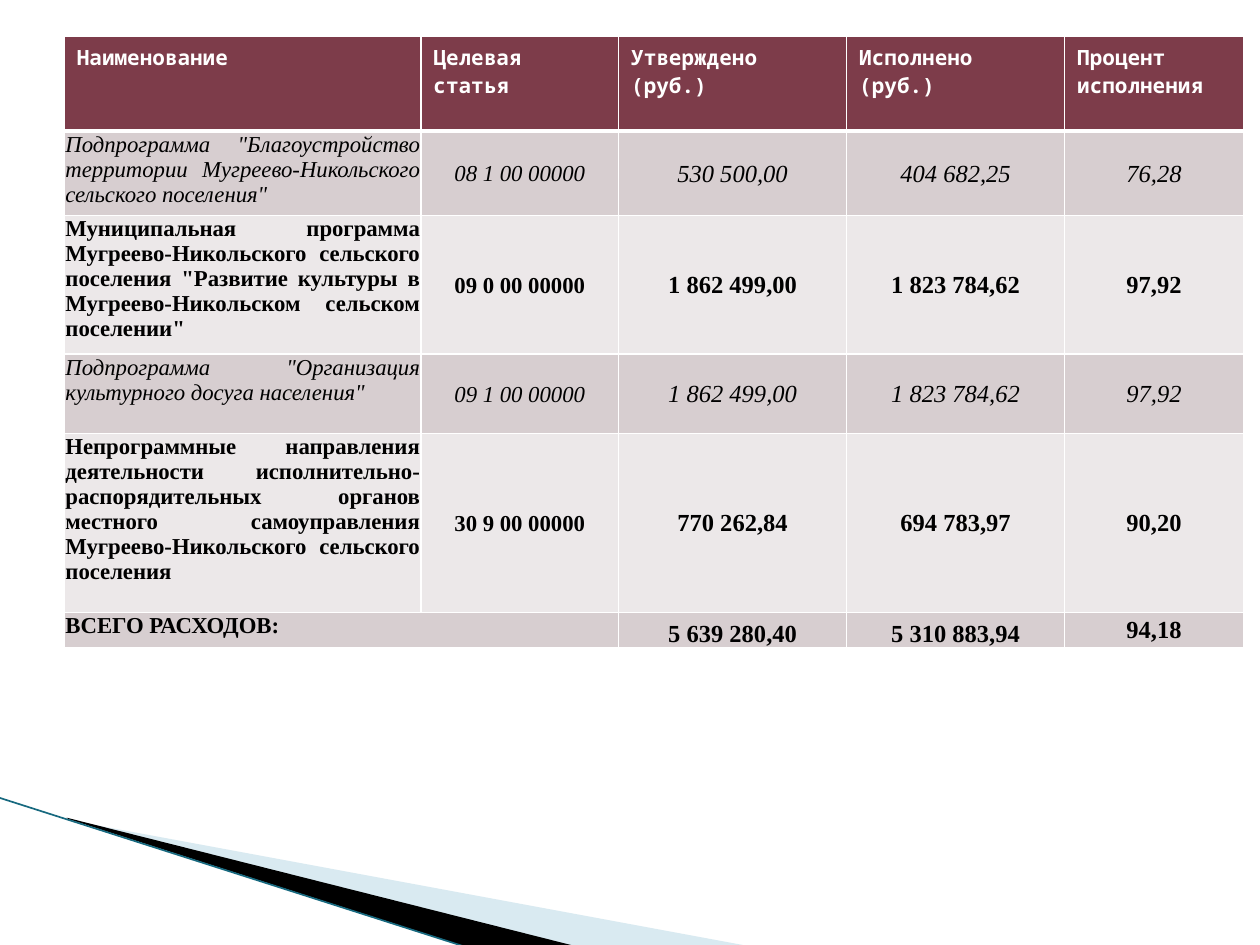
import pptx
import pptx.util
import pptx.dml.color
import pptx.enum.shapes
import pptx.enum.text
import pptx.oxml
import pptx.oxml.ns

ALIGN = pptx.enum.text.PP_ALIGN
ANCHOR = pptx.enum.text.MSO_ANCHOR
qn = pptx.oxml.ns.qn


def color(value):
    return pptx.dml.color.RGBColor.from_string(value)


def sub(parent, tag, **attrs):
    el = parent.makeelement(qn(tag), attrs)
    parent.append(el)
    return el


class Deck:
    COLS, ROWS = 100, 75
    HEAD_FONT, BODY_FONT = "Noto Sans Mono", "Times New Roman"
    HEAD_FILL, BANDS = "7D3C4A", ("ECE8E9", "D7CED0")
    WHITE, BLACK = "FFFFFF", "000000"

    def __init__(self):
        self.prs = pptx.Presentation()
        self.prs.slide_width = pptx.util.Inches(10)
        self.prs.slide_height = pptx.util.Inches(7.5)
        self.s = self.prs.slides.add_slide(self.prs.slide_layouts[6])
        self.s.background.fill.solid()
        self.s.background.fill.fore_color.rgb = color(self.WHITE)

    def x(self, cols):
        return round(self.prs.slide_width * cols / self.COLS)

    def y(self, rows):
        return round(self.prs.slide_height * rows / self.ROWS)

    def polygon(self, points, fill, opacity=100):
        start, *rest = [(self.x(a), self.y(b)) for a, b in points]
        builder = self.s.shapes.build_freeform(*start)
        builder.add_line_segments(rest)
        sp = builder.convert_to_shape()
        sp.shadow.inherit = False
        sp.line.fill.background()
        sp.fill.solid()
        sp.fill.fore_color.rgb = color(fill)
        if opacity < 100:
            clr = sp._element.spPr.find(qn("a:solidFill"))[0]
            sub(clr, "a:alpha", val=str(opacity * 1000))

    def line(self, start, end, stroke, width):
        cn = self.s.shapes.add_connector(
            pptx.enum.shapes.MSO_CONNECTOR.STRAIGHT,
            self.x(start[0]), self.y(start[1]), self.x(end[0]), self.y(end[1]))
        cn.line.color.rgb = color(stroke)
        cn.line.width = pptx.util.Pt(width)
        sub(cn._element.spPr, "a:effectLst")

    def table(self, left, top, widths, heights):
        frame = self.s.shapes.add_table(
            len(heights), len(widths), self.x(left), self.y(top),
            self.x(sum(widths)), self.y(sum(heights)))
        tbl = frame.table
        for column, width in zip(tbl.columns, widths):
            column.width = self.x(width)
        for row, height in zip(tbl.rows, heights):
            row.height = self.y(height)
        return tbl

    def paint(self, cell, fill, top=1, bottom=1):
        tcPr = cell._tc.get_or_add_tcPr()
        for side, width in (("L", 1), ("R", 1), ("T", top), ("B", bottom)):
            ln = sub(tcPr, "a:ln" + side, w=str(pptx.util.Pt(width)))
            sub(sub(ln, "a:solidFill"), "a:srgbClr", val=self.WHITE)
        cell.fill.solid()
        cell.fill.fore_color.rgb = color(fill)

    def set_text(self, cell, text, font, size, ink, bold, italic=False, align=ALIGN.LEFT):
        p = cell.text_frame.paragraphs[0]
        p.text = text
        p.alignment = align
        p.font.name = font
        p.font.size = pptx.util.Pt(size)
        p.font.bold = bold
        p.font.italic = italic
        p.font.color.rgb = color(ink)

    def head_cell(self, cell, text):
        self.paint(cell, self.HEAD_FILL, bottom=3)
        self.set_text(cell, text, self.HEAD_FONT, 12, self.WHITE, True)

    def body_cell(self, cell, text, row, size, bold, align, anchor):
        self.paint(cell, self.BANDS[row % 2], top=3 if row == 1 else 1)
        cell.margin_left = cell.margin_right = self.x(0.1)
        cell.margin_top, cell.margin_bottom = self.y(0.1), 0
        cell.vertical_anchor = anchor
        self.set_text(cell, text, self.BODY_FONT, size, self.BLACK, bold, not bold, align)


HEADERS = ["Наименование", "Целевая статья", "Утверждено (руб.)",
           "Исполнено (руб.)", "Процент исполнения"]
PROGRAMS = [
    ('Подпрограмма "Благоустройство территории Мугреево-Никольского сельского поселения"',
     "08 1 00 00000", "530 500,00", "404 682,25", "76,28"),
    ('Муниципальная программа Мугреево-Никольского сельского поселения '
     '"Развитие культуры в Мугреево-Никольском сельском поселении"',
     "09 0 00 00000", "1 862 499,00", "1 823 784,62", "97,92"),
    ('Подпрограмма "Организация культурного досуга населения"',
     "09 1 00 00000", "1 862 499,00", "1 823 784,62", "97,92"),
    ("Непрограммные направления деятельности исполнительно-распорядительных органов "
     "местного самоуправления Мугреево-Никольского сельского поселения",
     "30 9 00 00000", "770 262,84", "694 783,97", "90,20"),
]
TOTAL = ("ВСЕГО РАСХОДОВ:", "", "5 639 280,40", "5 310 883,94", "94,18")


def main():
    deck = Deck()
    deck.polygon([(5.5, 65.1), (59.5, 75.1), (45.6, 75.1), (5.5, 65)], "A0CBDC", 40)
    deck.polygon([(5.3, 64.9), (45.7, 75.1), (37.2, 75.2), (5.4, 65)], deck.BLACK)
    deck.line((-0.1, 63.3), (37.1, 75.2), "17697F", 0.95)

    tbl = deck.table(5.1, 2.9, [28.3, 15.7, 18.1, 17.3, 14.2],
                     [7.5, 6.7, 11, 6.3, 14.2, 2.8])
    for col, text in enumerate(HEADERS):
        deck.head_cell(tbl.cell(0, col), text)

    for row, values in enumerate(PROGRAMS, 1):
        for col, text in enumerate(values):
            deck.body_cell(tbl.cell(row, col), text, row,
                           size=13 if col < 2 else 14,
                           bold=row % 2 == 0,
                           align=ALIGN.CENTER if col else ALIGN.JUSTIFY,
                           anchor=ANCHOR.MIDDLE if col else ANCHOR.TOP)

    last = len(PROGRAMS) + 1
    tbl.cell(last, 0).merge(tbl.cell(last, 1))
    anchors = [ANCHOR.TOP, ANCHOR.TOP, ANCHOR.BOTTOM, ANCHOR.BOTTOM, ANCHOR.MIDDLE]
    for col, (text, anchor) in enumerate(zip(TOTAL, anchors)):
        deck.body_cell(tbl.cell(last, col), text, last,
                       size=13 if col < 2 else 14, bold=True,
                       align=ALIGN.CENTER if col else ALIGN.LEFT, anchor=anchor)

    deck.prs.save("out.pptx")


if __name__ == "__main__":
    main()
